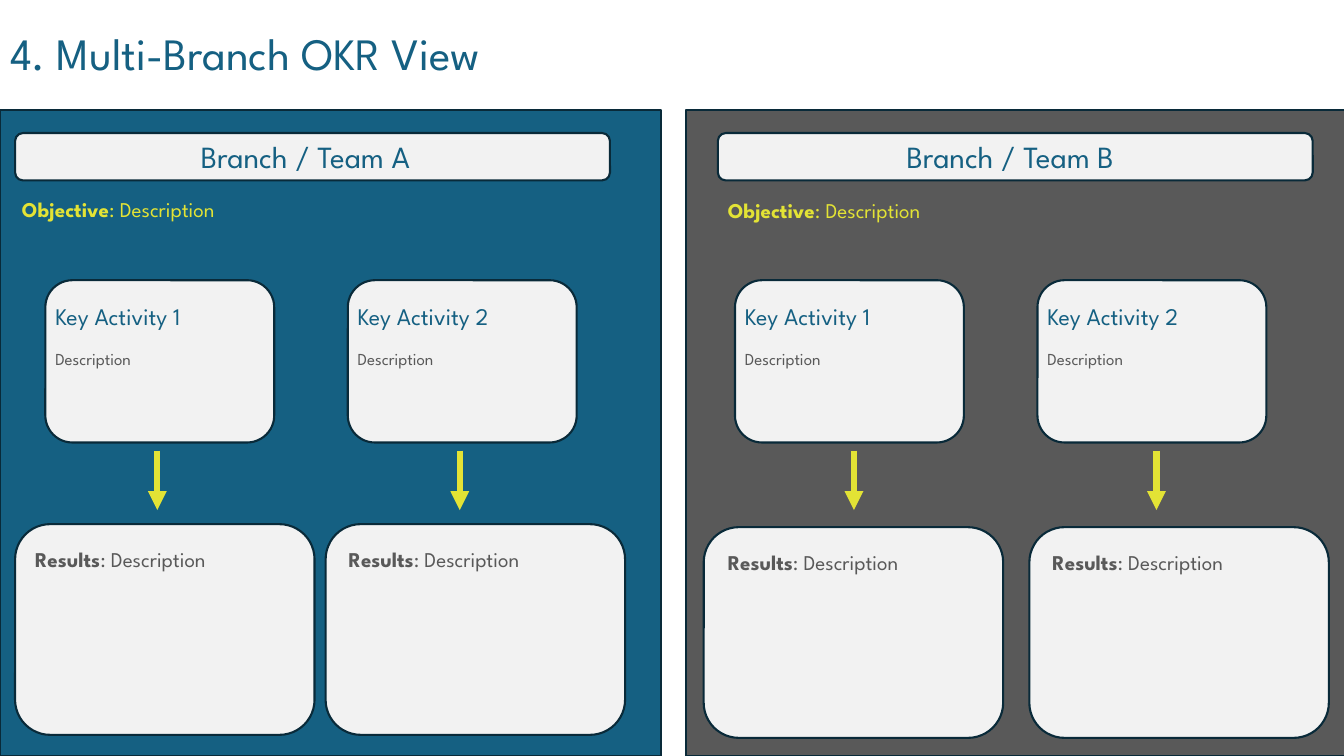
from pptx import Presentation
from pptx.dml.color import RGBColor
from pptx.enum.shapes import MSO_CONNECTOR, MSO_SHAPE
from pptx.enum.text import MSO_ANCHOR, MSO_AUTO_SIZE, PP_ALIGN
from pptx.oxml.ns import qn
from pptx.util import Inches, Pt
from lxml import etree

RECT, ROUNDED = MSO_SHAPE.RECTANGLE, MSO_SHAPE.ROUNDED_RECTANGLE
STRAIGHT = MSO_CONNECTOR.STRAIGHT
LEFT, CENTER = PP_ALIGN.LEFT, PP_ALIGN.CENTER
TOP, GROW = MSO_ANCHOR.TOP, MSO_AUTO_SIZE.SHAPE_TO_FIT_TEXT

FONT = "League Spartan"
COLORS = {"blue": "156082", "gray": "595959", "card": "F2F2F2",
          "outline": "092A39", "yellow": "E3E335", "white": "FFFFFF"}

TITLE = "4. Multi-Branch OKR View"
ACTIVITIES = ["Key Activity 1", "Key Activity 2"]
# Lengths in inches; objective is (left, top), each result is (card left, text left)
BRANCHES = [
    {"name": "Branch / Team A", "fill": "blue", "panel": 0,
     "header": 0.15, "name_left": 0.08, "objective": (0.12, 1.9),
     "activity": 0.45, "arrow": 1.56,
     "results": [(0.15, 0.25), (3.23, 3.36)], "result_top": 5.2},
    {"name": "Branch / Team B", "fill": "gray", "panel": 6.8,
     "header": 7.12, "name_left": 7.07, "objective": (7.12, 1.91),
     "activity": 7.29, "arrow": 8.47,
     "results": [(6.98, 7.12), (10.21, 10.34)], "result_top": 5.23},
]
ACTIVITY_STEP = 3


def color(name):
    return RGBColor.from_string(COLORS[name])


def add_box(slide, kind, left, top, width, height, fill):
    sp = slide.shapes.add_shape(kind, Inches(left), Inches(top),
                                Inches(width), Inches(height))
    sp.shadow.inherit = False
    sp.fill.solid()
    sp.fill.fore_color.rgb = color(fill)
    sp.line.color.rgb = color("outline")
    sp.line.width = Pt(1.5)


def write(sp, text, size, ink, align=LEFT, label=""):
    """Fill a text shape, with an optional bold label before the text."""
    tf = sp.text_frame
    tf.word_wrap = True
    tf.auto_size = GROW
    tf.vertical_anchor = TOP
    p = tf.paragraphs[0]
    p.alignment = align
    p.font.name = FONT
    p.font.size = Pt(size)
    p.font.color.rgb = color(ink)
    if label:
        r = p.add_run()
        r.text = label
        r.font.bold = True
    p.add_run().text = text


def add_text(slide, left, top, width, height, *args, **kwargs):
    sp = slide.shapes.add_textbox(Inches(left), Inches(top),
                                  Inches(width), Inches(height))
    write(sp, *args, **kwargs)


def add_arrow(slide, x, top, bottom):
    line = slide.shapes.add_connector(STRAIGHT, Inches(x), Inches(top),
                                      Inches(x), Inches(bottom))
    line.line.color.rgb = color("yellow")
    line.line.width = Pt(4.5)
    ln = line.line._get_or_add_ln()
    etree.SubElement(ln, qn("a:tailEnd"), type="triangle")
    etree.SubElement(line._element.spPr, qn("a:effectLst"))


def add_branch(slide, branch):
    add_box(slide, RECT, branch["panel"], 1.09, 6.56, 6.41, branch["fill"])
    add_box(slide, ROUNDED, branch["header"], 1.32, 5.9, 0.47, "card")
    add_text(slide, branch["name_left"], 1.32, 5.9, 0.47,
             branch["name"], 22, "blue", CENTER)
    add_text(slide, *branch["objective"], 3.33, 0.35,
             ": Description", 15, "yellow", label="Objective")

    top = branch["result_top"]
    for i, (activity, result) in enumerate(zip(ACTIVITIES, branch["results"])):
        left = branch["activity"] + i * ACTIVITY_STEP
        add_box(slide, ROUNDED, left, 2.78, 2.27, 1.61, "card")
        add_text(slide, left, 2.94, 2.27, 0.39, activity, 17, "blue")
        add_text(slide, left, 3.41, 2.27, 0.3, "Description", 12, "gray")
        add_arrow(slide, branch["arrow"] + i * ACTIVITY_STEP, 4.47, 5.06)
        card_left, text_left = result
        add_box(slide, ROUNDED, card_left, top, 2.97, 2.09, "card")
        add_text(slide, text_left, top + 0.17, 2.84, 0.35,
                 ": Description", 15, "gray", label="Results")


def main():
    prs = Presentation()
    prs.slide_width, prs.slide_height = Inches(13.33), Inches(7.5)
    slide = prs.slides.add_slide(prs.slide_layouts[5])
    slide.background.fill.solid()
    slide.background.fill.fore_color.rgb = color("white")

    title = slide.shapes.title
    title.left, title.top = Inches(0), Inches(0.21)
    title.width, title.height = Inches(7.6), Inches(0.64)
    write(title, TITLE, 32, "blue")

    for branch in BRANCHES:
        add_branch(slide, branch)
    prs.save("out.pptx")


if __name__ == "__main__":
    main()
